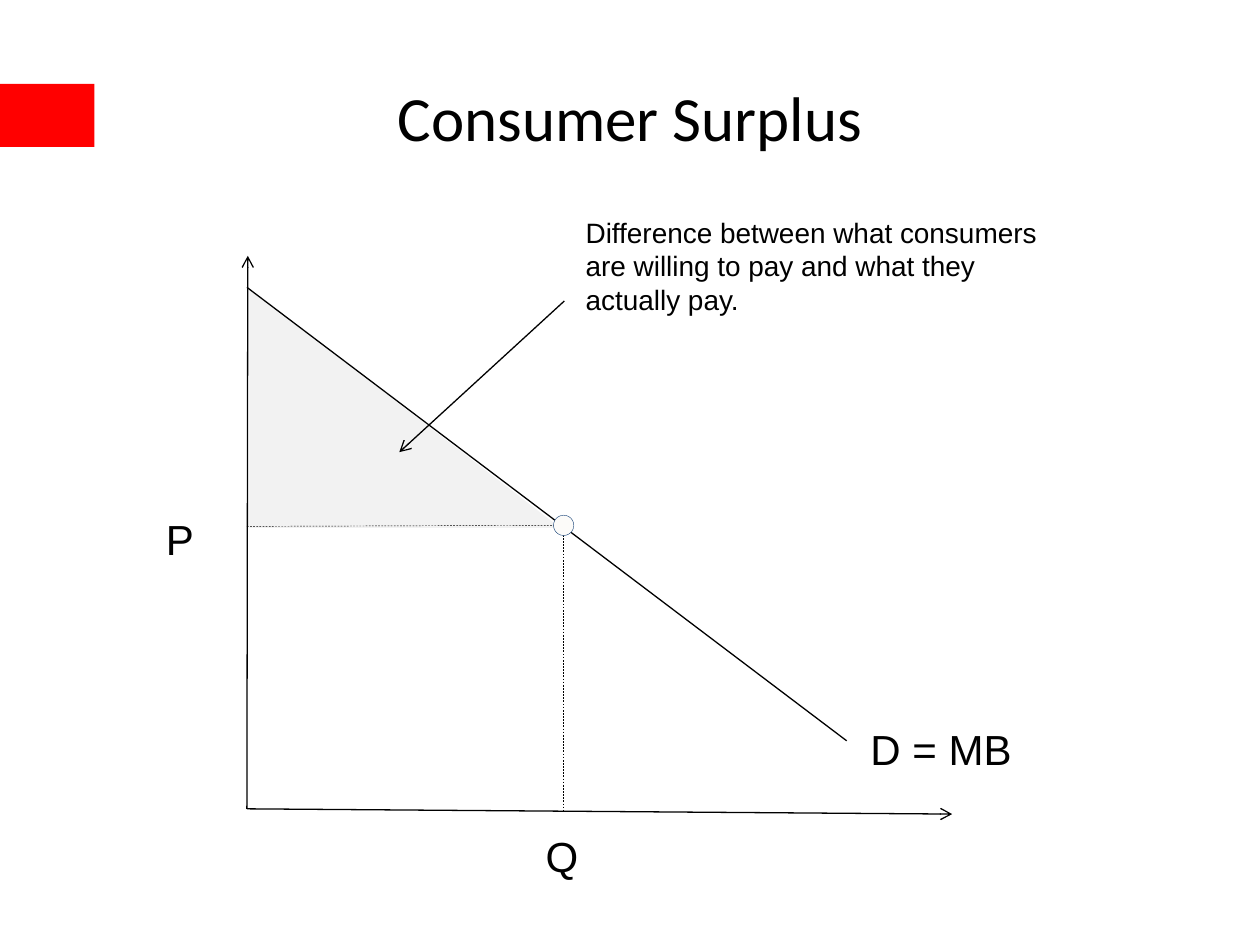
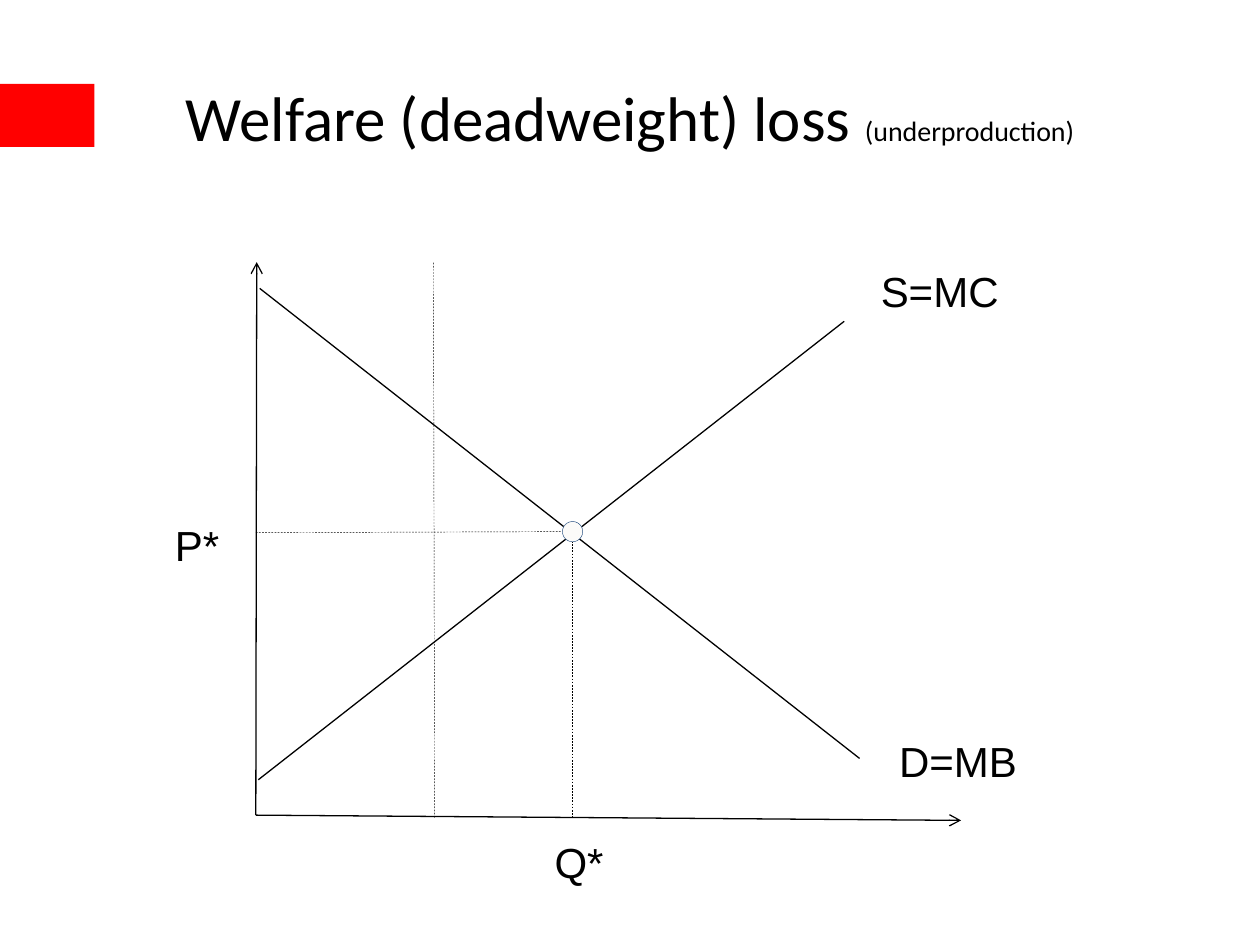
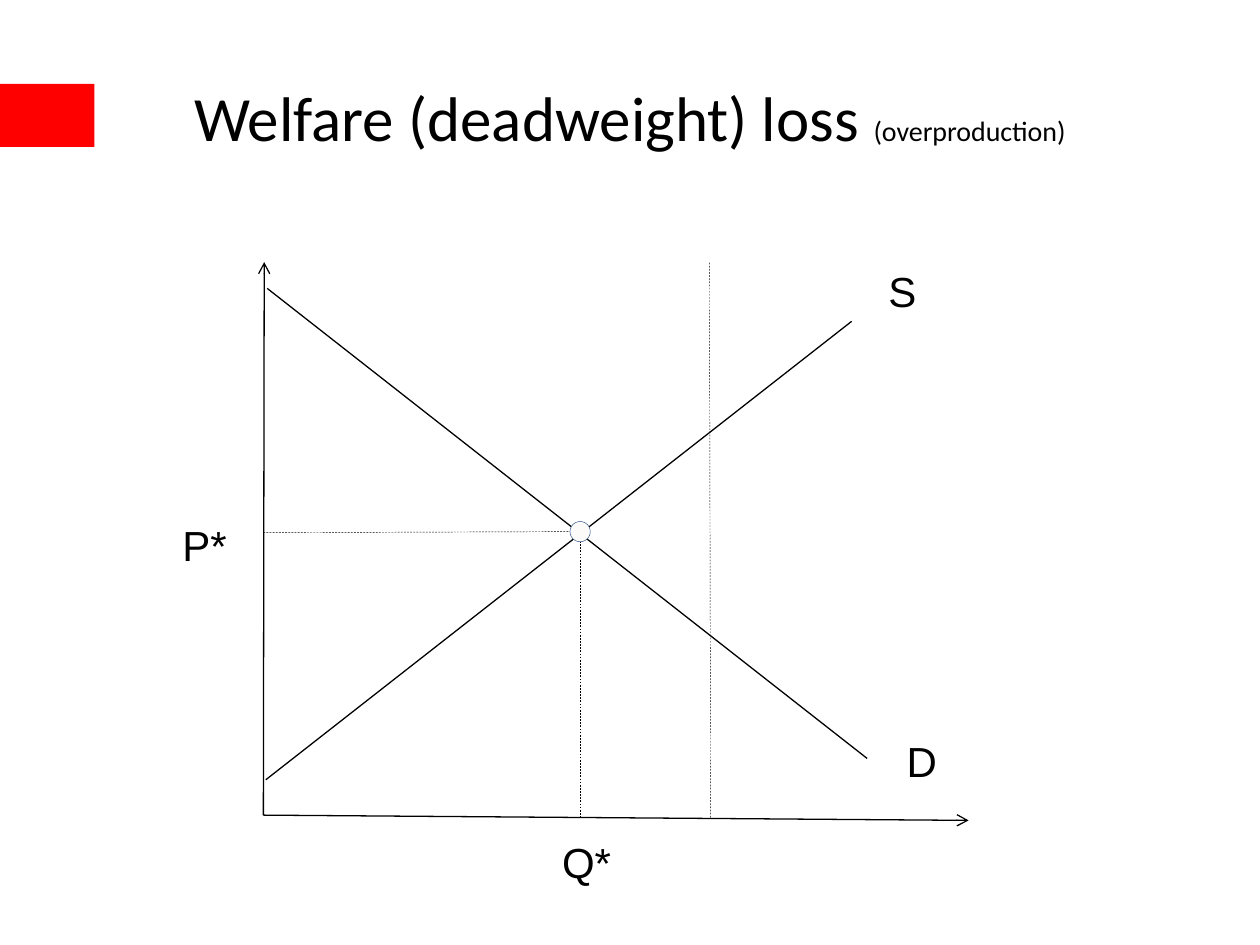
from lxml import etree
from pptx import Presentation
from pptx.dml.color import RGBColor
from pptx.enum.dml import MSO_LINE
from pptx.enum.shapes import MSO_CONNECTOR, MSO_SHAPE
from pptx.enum.text import MSO_ANCHOR, MSO_AUTO_SIZE, PP_ALIGN
from pptx.oxml.ns import qn
from pptx.util import Pt

BLACK = RGBColor(0x00, 0x00, 0x00)
RED = RGBColor(0xFF, 0x00, 0x00)
GREY = RGBColor(0xF2, 0xF2, 0xF2)
CREAM = RGBColor(0xFC, 0xFB, 0xF9)
NAVY = RGBColor(0x1F, 0x49, 0x7D)

EQ_X, EQ_Y = 181, -162  # equilibrium, measured from the origin of the axes
AXIS_TOP = -316
DOT = 11.6


def set_format(target, values):
    for name, value in values.items():
        setattr(target, name, value)


class Deck:
    """Holds the style, the current slide and the origin of its axes."""

    title_font = {"name": "Calibri", "size": Pt(36)}
    label_font = {"name": "Arial", "size": Pt(24)}
    note_font = {"name": "Arial", "size": Pt(16)}

    def __init__(self):
        self.prs = Presentation()
        self.prs.slide_width, self.prs.slide_height = Pt(720), Pt(540)

    def add_slide(self, title, origin, subtitle=None):
        self.s = self.prs.slides.add_slide(self.prs.slide_layouts[5])
        self.origin = origin
        shape = self.s.shapes.title
        set_format(shape, {"left": Pt(36), "top": Pt(21.6), "width": Pt(648), "height": Pt(90)})
        tf = shape.text_frame
        tf.vertical_anchor = MSO_ANCHOR.MIDDLE
        p = tf.paragraphs[0]
        p.alignment = PP_ALIGN.CENTER
        self.run(p, title, self.title_font)
        if subtitle:
            self.run(p, subtitle, {**self.title_font, "size": Pt(16)})

    def run(self, p, text, font):
        r = p.add_run()
        r.text = text
        set_format(r.font, font)
        r.font.color.rgb = BLACK

    def place(self, x, y):
        """Turn a point measured from the origin into slide lengths."""
        return Pt(self.origin[0] + x), Pt(self.origin[1] + y)

    def paint(self, shape, fill, line=None):
        shape.shadow.inherit = False
        shape.fill.solid()
        shape.fill.fore_color.rgb = fill
        if line is None:
            shape.line.fill.background()
        else:
            shape.line.color.rgb = line
            shape.line.width = Pt(0.25)

    def master_band(self):
        """Draw the red band on the master, so that every slide shows it."""
        band = self.s.shapes.add_shape(MSO_SHAPE.RECTANGLE, Pt(0), Pt(48), Pt(54), Pt(36))
        self.paint(band, RED)
        self.prs.slide_master.shapes.element.append(band.element)

    def line(self, start, end, dashed=False, arrow=False):
        c = self.s.shapes.add_connector(
            MSO_CONNECTOR.STRAIGHT, *self.place(*start), *self.place(*end))
        c.line.color.rgb = BLACK
        c.line.width = Pt(0.25 if dashed else 0.75)
        if dashed:
            c.line.dash_style = MSO_LINE.DASH
        if arrow:
            etree.SubElement(c.line._get_or_add_ln(), qn("a:tailEnd"), type="arrow")
        etree.SubElement(c.element.spPr, qn("a:effectLst"))

    def area(self, *points):
        first, *rest = [self.place(*point) for point in points]
        builder = self.s.shapes.build_freeform(*first)
        builder.add_line_segments(rest, close=True)
        self.paint(builder.convert_to_shape(), GREY)

    def dot(self, x, y):
        corner = self.place(x - DOT / 2, y - DOT / 2)
        self.paint(self.s.shapes.add_shape(MSO_SHAPE.OVAL, *corner, Pt(DOT), Pt(DOT)),
                   CREAM, NAVY)

    def text(self, x, y, width, *lines, font=label_font, height=30.2):
        tf = self.s.shapes.add_textbox(*self.place(x, y), Pt(width), Pt(height)).text_frame
        set_format(tf, {"word_wrap": False, "auto_size": MSO_AUTO_SIZE.SHAPE_TO_FIT_TEXT})
        for i, line in enumerate(lines):
            p = tf.add_paragraph() if i else tf.paragraphs[0]
            p.line_spacing = 0.8
            if i:
                p.space_before = Pt(3.8)
            self.run(p, line, font)

    def equilibrium(self, price, quantity, price_width, quantity_width):
        """Draw the axes, the dashed guides, the dot and the axis labels."""
        self.line((0, 0), (403, 3), arrow=True)
        self.line((0, 0), (0.5, AXIS_TOP), arrow=True)
        self.line((0, EQ_Y + 0.6), (EQ_X - DOT / 2, EQ_Y), dashed=True)
        self.line((EQ_X, EQ_Y + 3.6), (EQ_X, 1), dashed=True)
        self.dot(EQ_X, EQ_Y)
        self.text(-53.3, -167, price_width, price)
        self.text(163.6, 14.4, quantity_width, quantity)

    def welfare_loss(self, case, origin, output_x, supply, demand):
        """Add a market slide; supply and demand are (label, width) pairs."""
        self.add_slide("Welfare (deadweight) loss ", origin, case)
        self.line((2.2, -301), (345, -32.4))
        self.line((1.4, -20.2), (336.2, -282.2))
        self.equilibrium("P*", "Q*", 40.3, 42.5)
        self.text(350, -311.8, supply[1], supply[0])
        self.text(360.5, -43.2, demand[1], demand[0])
        self.line((output_x, 1.4), (output_x - 0.7, AXIS_TOP), dashed=True)


def main():
    deck = Deck()

    deck.add_slide("Consumer Surplus", (141.1, 462.2))
    deck.master_band()
    deck.area((1.4, -160.6), (1.4, -297.4), (179, -160.6))
    deck.line((0, -298), (342.7, -38.9))
    deck.equilibrium("P", "Q", 31, 33.1)
    deck.text(349.2, -46.8, 95.8, "D = MB")
    deck.line((181.4, -290.2), (87.1, -203.8), arrow=True)
    deck.text(186.5, -339.1, 275.8,
              "Difference between what consumers",
              "are willing to pay and what they",
              "actually pay.",
              font=deck.note_font, height=61.2)

    deck.welfare_loss("(underproduction)", (146.2, 465.8), 102.2,
                      ("S=MC", 82.8), ("D=MB", 82.8))
    deck.welfare_loss("(overproduction)", (150.5, 465.8), 255.6,
                      ("S", 31), ("D", 32.4))

    deck.prs.save("out.pptx")


if __name__ == "__main__":
    main()
